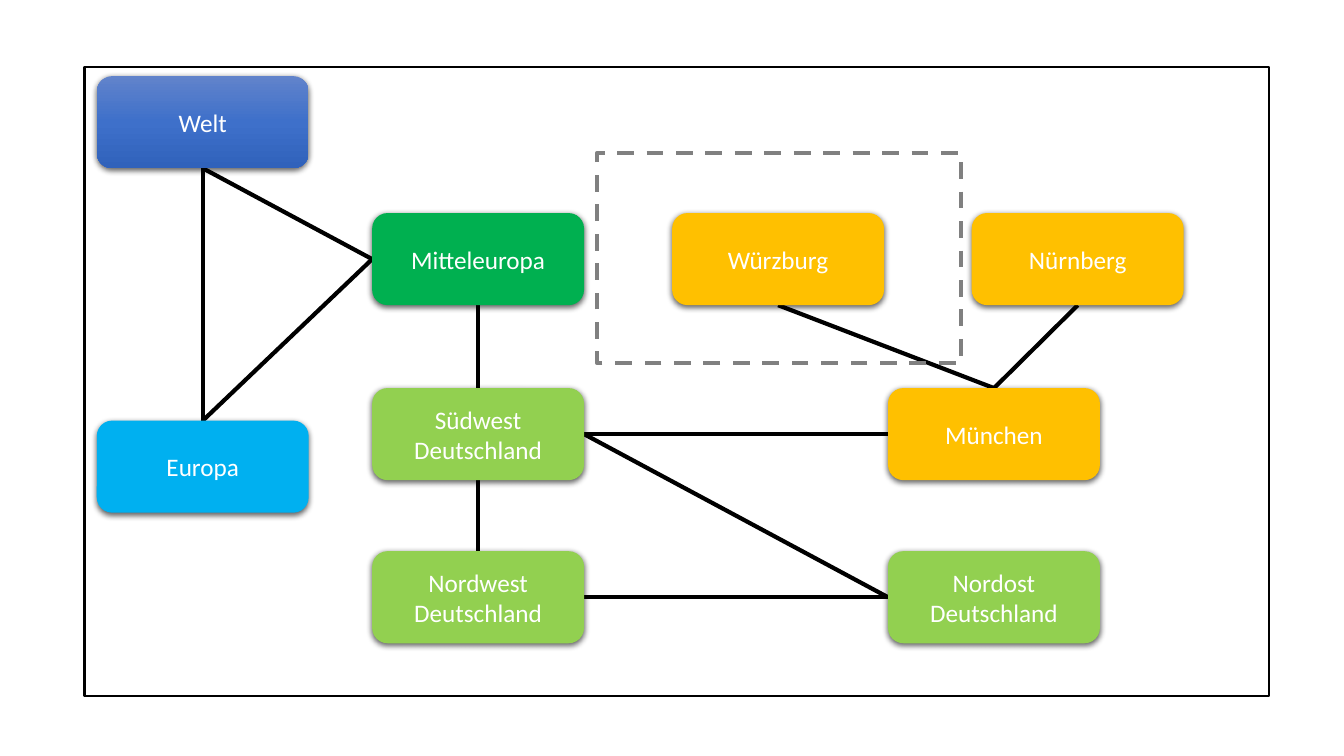
from copy import deepcopy

from lxml import etree
from pptx import Presentation
from pptx import util as u
from pptx.dml.color import RGBColor
from pptx.enum import dml, shapes, text
from pptx.oxml import ns

COLORS = {
    "line": "000000",
    "dash": "808080",
    "label": "FFFFFF",
    "europe": "00B0F0",
    "central": "00B050",
    "germany": "92D050",
    "city": "FFC000",
}
WORLD_GRADIENT = ["6183CB", "3E70CA", "3062BB"]

TOP, LEFT, BOTTOM, RIGHT = range(4)
BOX_WIDTH, BOX_HEIGHT = 5.34, 2.32
WEST, MIDDLE, EAST = 2.44, 9.38, 22.38
UPPER, CENTER, LOWER = 5.37, 9.78, 13.89

# label: (left, top, colour), lengths in cm
REGIONS = {
    "Welt": (WEST, 1.92, None),
    "Europa": (WEST, 10.6, "europe"),
    "Nordost\nDeutschland": (EAST, LOWER, "germany"),
    "Nordwest\nDeutschland": (MIDDLE, LOWER, "germany"),
    "Südwest\nDeutschland": (MIDDLE, CENTER, "germany"),
    "München": (EAST, CENTER, "city"),
    "Nürnberg": (24.49, UPPER, "city"),
    "Würzburg": (16.94, UPPER, "city"),
    "Mitteleuropa": (MIDDLE, UPPER, "central"),
}
# (region, side, region, side); regions go by the first word of their label
LINKS = [
    ("Südwest", TOP, "Mitteleuropa", BOTTOM),
    ("Welt", BOTTOM, "Mitteleuropa", LEFT),
    ("Welt", BOTTOM, "Europa", TOP),
    ("Europa", TOP, "Mitteleuropa", LEFT),
    ("Südwest", BOTTOM, "Nordwest", TOP),
    ("Südwest", RIGHT, "Nordost", LEFT),
    ("Südwest", RIGHT, "München", LEFT),
    ("Nordost", LEFT, "Nordwest", RIGHT),
    ("München", TOP, "Nürnberg", BOTTOM),
    ("München", TOP, "Würzburg", BOTTOM),
]


def rgb(name):
    return RGBColor.from_string(COLORS[name])


def fill_with_gradient(box, hexes):
    """Fill the box from top to bottom with three evenly spaced colours."""
    box.fill.gradient()
    box.fill.gradient_angle = 270
    stop_list = box.element.spPr.find(".//" + ns.qn("a:gsLst"))
    stop_list.insert(1, deepcopy(stop_list[0]))
    for index, (stop, color) in enumerate(zip(box.fill.gradient_stops, hexes)):
        stop.position = index / (len(hexes) - 1)
        stop.color.rgb = RGBColor.from_string(color)


def add_soft_shadow(box):
    box.shadow.inherit = False
    effects = box.element.spPr.find(ns.qn("a:effectLst"))
    shadow = etree.SubElement(
        effects, ns.qn("a:outerShdw"), blurRad=str(u.Pt(4.5)),
        dist=str(u.Pt(1.5)), dir="5400000", algn="ctr", rotWithShape="0")
    color = etree.SubElement(shadow, ns.qn("a:srgbClr"), val=COLORS["line"])
    etree.SubElement(color, ns.qn("a:alpha"), val="63000")


def add_region(slide, label, left, top, color):
    region = slide.shapes.add_shape(
        shapes.MSO_SHAPE.ROUNDED_RECTANGLE,
        u.Cm(left), u.Cm(top), u.Cm(BOX_WIDTH), u.Cm(BOX_HEIGHT))
    if color:
        region.fill.solid()
        region.fill.fore_color.rgb = rgb(color)
    else:
        fill_with_gradient(region, WORLD_GRADIENT)
    region.line.fill.background()
    add_soft_shadow(region)
    frame = region.text_frame
    frame.text = label
    frame.vertical_anchor = text.MSO_ANCHOR.MIDDLE
    for paragraph in frame.paragraphs:
        paragraph.alignment = text.PP_ALIGN.CENTER
        paragraph.font.name = "Calibri"
        paragraph.font.size = u.Pt(18)
        paragraph.font.color.rgb = rgb("label")
    return region


def add_link(slide, start, start_side, end, end_side):
    link = slide.shapes.add_connector(shapes.MSO_CONNECTOR.STRAIGHT, 0, 0, 0, 0)
    link.begin_connect(start, start_side)
    link.end_connect(end, end_side)
    link.line.color.rgb = rgb("line")
    link.line.width = u.Pt(3)
    etree.SubElement(link.element.spPr, ns.qn("a:effectLst"))
    return link


def add_outline(slide, left, top, width, height, color, weight, dash=None):
    outline = slide.shapes.add_shape(
        shapes.MSO_SHAPE.RECTANGLE,
        u.Cm(left), u.Cm(top), u.Cm(width), u.Cm(height))
    outline.shadow.inherit = False
    outline.fill.background()
    outline.line.color.rgb = rgb(color)
    outline.line.width = u.Pt(weight)
    outline.line.dash_style = dash


def main():
    deck = Presentation()
    deck.slide_width, deck.slide_height = u.Cm(33.87), u.Cm(19.05)
    slide = deck.slides.add_slide(deck.slide_layouts[6])

    regions = {label.split()[0]: add_region(slide, label, *place)
               for label, place in REGIONS.items()}
    for start, start_side, end, end_side in LINKS:
        link = add_link(slide, regions[start], start_side, regions[end], end_side)
        # Links lie behind the boxes they join.
        regions["Welt"].element.addprevious(link.element)

    add_outline(slide, 2.13, 1.7, 29.85, 15.85, "line", 1.5)
    add_outline(slide, 15.04, 3.86, 9.19, 5.28, "dash", 3, dml.MSO_LINE.DASH)
    deck.save("out.pptx")


if __name__ == "__main__":
    main()
